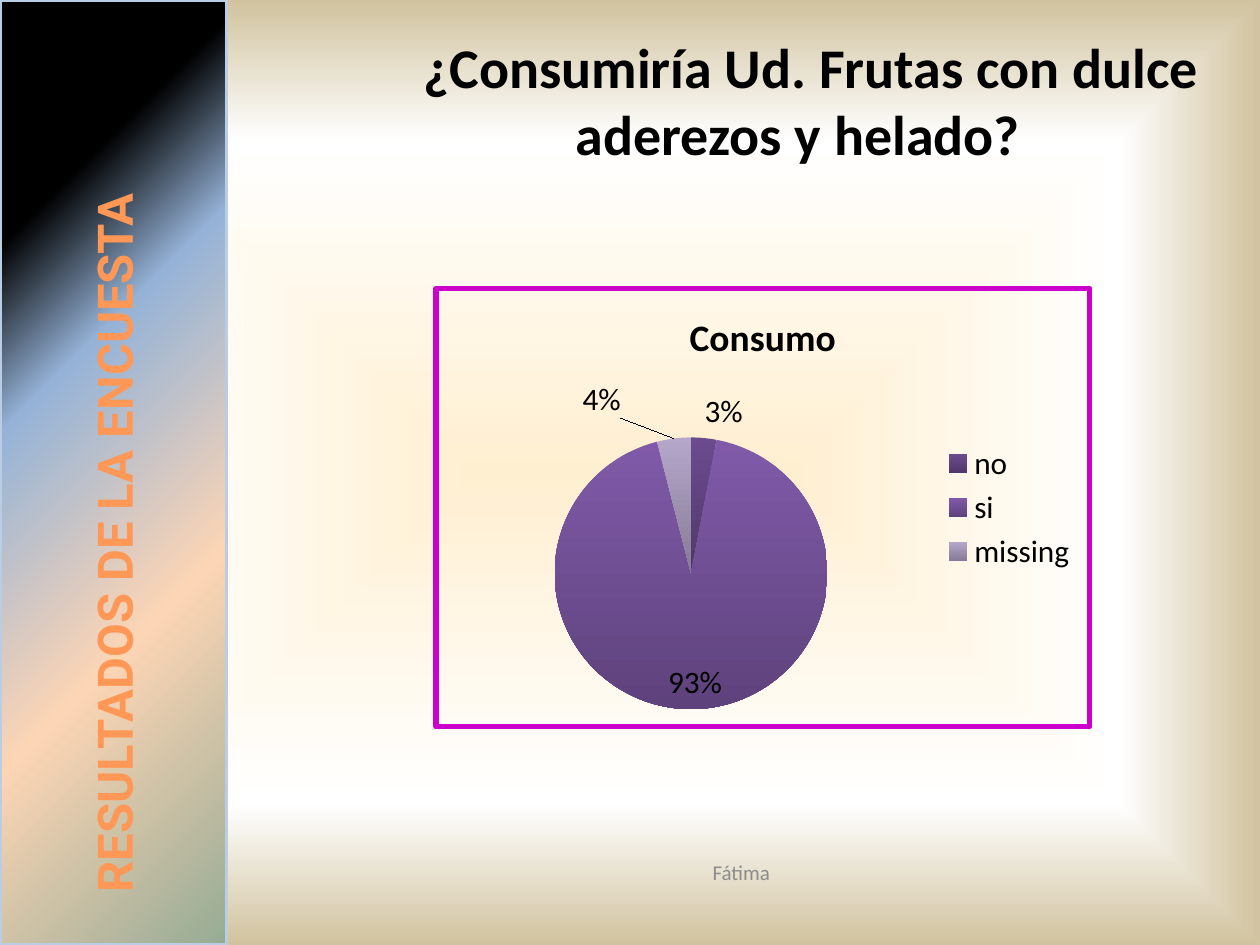
from lxml.etree import SubElement
from pptx import Presentation
from pptx.chart.data import CategoryChartData
from pptx.dml.color import RGBColor
from pptx.enum.chart import XL_CHART_TYPE as ChartType
from pptx.enum.chart import XL_LABEL_POSITION as LabelPlace
from pptx.enum.chart import XL_LEGEND_POSITION as LegendPlace
from pptx.enum.shapes import MSO_SHAPE as Shape
from pptx.enum.text import MSO_ANCHOR as Anchor
from pptx.enum.text import PP_ALIGN as Align
from pptx.oxml import parse_xml
from pptx.oxml.ns import nsdecls, qn
from pptx.util import Pt

BLACK = RGBColor(0x00, 0x00, 0x00)
WHITE = RGBColor(0xFF, 0xFF, 0xFF)
GRAY = RGBColor(0x8C, 0x8C, 0x8C)
CREAM = RGBColor(0xFF, 0xEF, 0xD1)
SAND = RGBColor(0xD1, 0xC3, 0x9F)
SKY = RGBColor(0x95, 0xB3, 0xD7)
PALE_SKY = RGBColor(0xB9, 0xCD, 0xE5)
PEACH = RGBColor(0xFC, 0xD5, 0xB5)
SAGE = RGBColor(0x96, 0xAB, 0x94)
ORANGE = RGBColor(0xFF, 0x98, 0x56)
MAGENTA = RGBColor(0xCC, 0x00, 0xCC)
SLICE_COLORS = [
    (RGBColor(0x6B, 0x4B, 0x8E), RGBColor(0x50, 0x38, 0x6A)),
    (RGBColor(0x80, 0x5A, 0xA9), RGBColor(0x5E, 0x42, 0x7C)),
    (RGBColor(0xB5, 0xA7, 0xCA), RGBColor(0x86, 0x7B, 0x96)),
]

CENTERED_PATH = (
    '<a:path path="rect"><a:fillToRect l="50000" t="50000" r="50000" b="50000"/></a:path>'
)


def replace_with_gradient(parent, stops, angle=None):
    """Turn the first solid fill under parent into a linear or centered gradient."""
    solid = next(parent.iter(qn("a:solidFill")))
    colors = "".join(
        f'<a:gs pos="{place * 1000}"><a:srgbClr val="{color}"/></a:gs>' for place, color in stops
    )
    course = CENTERED_PATH if angle is None else f'<a:lin ang="{angle * 60000}" scaled="0"/>'
    gradient = parse_xml(
        f'<a:gradFill {nsdecls("a")} rotWithShape="1"><a:gsLst>{colors}</a:gsLst>{course}</a:gradFill>'
    )
    solid.getparent().replace(solid, gradient)


def place_by_hand(parent, index, **settings):
    """Give a chart element a manual layout."""
    for old in parent.findall(qn("c:layout")):
        parent.remove(old)
    layout = parse_xml(f'<c:layout {nsdecls("c")}/>')
    parent.insert(index, layout)
    manual = SubElement(layout, qn("c:manualLayout"))
    for name, value in settings.items():
        SubElement(manual, qn(f"c:{name}")).set("val", str(value))


class SlideBuilder:
    """Holds the fonts and the current slide."""

    font = "Calibri"
    banner_font = "Roboto"

    def __init__(self, deck):
        """Add a title-only page to the deck."""
        self.page = deck.slides.add_slide(deck.slide_layouts[5])

    def style(self, para, size, color, bold=False, font=None):
        """Set the font of a paragraph."""
        para.font.name = font or self.font
        para.font.size = Pt(size)
        para.font.bold = bold
        para.font.color.rgb = color

    def background(self, stops):
        """Fill the page with a gradient from its center."""
        self.page.background.fill.solid()
        replace_with_gradient(self.page.element, stops)

    def title(self, text, left, top, width, height):
        """Place the title, its first line set slightly to the right."""
        box = self.page.shapes.title
        box.left, box.top, box.width, box.height = Pt(left), Pt(top), Pt(width), Pt(height)
        frame = box.text_frame
        frame.text = text
        frame.word_wrap = True
        frame.vertical_anchor = Anchor.MIDDLE
        para = frame.paragraphs[0]
        para.alignment = Align.CENTER
        para._p.get_or_add_pPr().set("indent", str(Pt(15)))
        self.style(para, 32, BLACK, bold=True)

    def caption(self, text, left, top, width, height):
        """Add a small centered text box."""
        frame = self.page.shapes.add_textbox(Pt(left), Pt(top), Pt(width), Pt(height)).text_frame
        frame.text = text
        frame.word_wrap = True
        frame.vertical_anchor = Anchor.MIDDLE
        frame.paragraphs[0].alignment = Align.CENTER
        self.style(frame.paragraphs[0], 12, GRAY)

    def banner(self, text, left, top, width, height, stops):
        """Add a gradient side banner with text running upwards."""
        banner = self.page.shapes.add_shape(
            Shape.RECTANGLE, Pt(left), Pt(top), Pt(width), Pt(height)
        )
        banner.shadow.inherit = False
        banner.fill.solid()
        banner.fill.fore_color.rgb = BLACK
        replace_with_gradient(banner.element, stops, 45)
        banner.line.color.rgb = PALE_SKY
        banner.line.width = Pt(2)
        frame = banner.text_frame
        frame.text = text
        frame.word_wrap = True
        frame.vertical_anchor = Anchor.MIDDLE
        frame.margin_bottom = Pt(30)
        frame._txBody.bodyPr.set("vert", "vert270")
        frame.paragraphs[0].alignment = Align.LEFT
        self.style(frame.paragraphs[0], 28, ORANGE, bold=True, font=self.banner_font)

    def pie(self, heading, shares, left, top, width, height):
        """Add a framed pie chart with percent labels and a legend."""
        data = CategoryChartData()
        data.categories = list(shares)
        data.add_series("Series 1", list(shares.values()))
        chart = self.page.shapes.add_chart(
            ChartType.PIE, Pt(left), Pt(top), Pt(width), Pt(height), data
        ).chart
        chart.font.name = self.font
        chart.font.size = Pt(18)
        chart.font.color.rgb = BLACK
        chart.has_title = True
        chart.chart_title.text_frame.text = heading
        self.style(chart.chart_title.text_frame.paragraphs[0], 21.6, BLACK, bold=True)
        chart.has_legend = True
        chart.legend.position = LegendPlace.RIGHT
        chart.legend.include_in_layout = False
        self.frame_chart(chart)
        plot = chart.plots[0]
        plot.vary_by_categories = True
        place_by_hand(
            plot._element.getparent(), 0, layoutTarget="inner", xMode="edge", yMode="edge",
            x=0.18, y=0.34, w=0.42, h=0.62,
        )
        self.slices(plot.series[0])

    def frame_chart(self, chart):
        """Draw a border around the whole chart."""
        border = parse_xml(
            f'<c:spPr {nsdecls("c", "a")}><a:noFill/><a:ln w="{Pt(3)}"><a:solidFill>'
            f'<a:srgbClr val="{MAGENTA}"/></a:solidFill><a:round/></a:ln></c:spPr>'
        )
        chart.element.find(qn("c:chart")).addnext(border)

    def slices(self, series):
        """Color and label each slice."""
        series.data_labels.show_percentage = True
        series.data_labels.show_value = False
        places = [LabelPlace.OUTSIDE_END, LabelPlace.INSIDE_END, LabelPlace.OUTSIDE_END]
        for index, ((light, dark), place) in enumerate(zip(SLICE_COLORS, places)):
            point = series.points[index]
            point.format.fill.solid()
            point.format.fill.fore_color.rgb = light
            slice_xml = series._element.findall(qn("c:dPt"))[index]
            replace_with_gradient(slice_xml, [(0, light), (100, dark)], 90)
            point.data_label.position = place
        labels = series.data_labels._element.findall(qn("c:dLbl"))
        for label in labels:
            label.find(qn("c:showVal")).set("val", "0")
            label.find(qn("c:showPercent")).set("val", "1")
        place_by_hand(labels[-1], 1, x=-0.08, y=-0.03)


def main():
    """Build the survey slide."""
    deck = Presentation()
    deck.slide_width, deck.slide_height = Pt(720), Pt(540)
    builder = SlideBuilder(deck)
    builder.background([(0, CREAM), (70, WHITE), (100, SAND)])
    builder.title("¿Consumiría Ud. Frutas con dulce aderezos y helado?", 174, 12, 564, 90)
    builder.pie("Consumo", {"no": 3, "si": 93, "missing": 4}, 247.7, 163.4, 376.6, 253.4)
    builder.caption("Fátima", 309.6, 484, 228, 29)
    builder.banner(
        "RESULTADOS DE LA ENCUESTA", 0, 0, 129.6, 540,
        [(21, BLACK), (37, SKY), (66, PEACH), (100, SAGE)],
    )
    deck.save("out.pptx")


if __name__ == "__main__":
    main()
